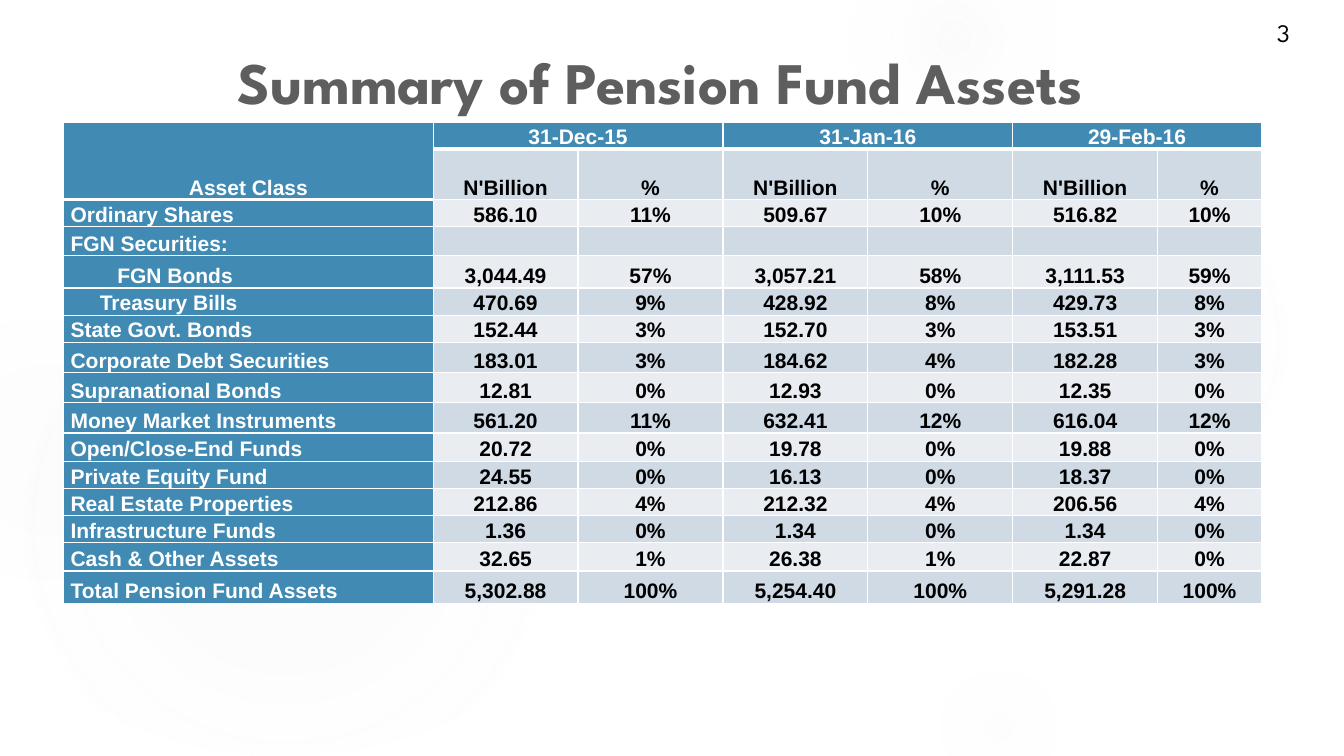
from collections import namedtuple
from dataclasses import dataclass

from lxml import etree
from pptx import Presentation
from pptx.dml.color import RGBColor
from pptx.enum import shapes, text
from pptx.oxml import ns
from pptx.util import Pt

Box = namedtuple("Box", "left top width height")


@dataclass(frozen=True)
class Theme:
    display_font: str = "League Spartan"
    table_font: str = "Arial"
    white: str = "FFFFFF"
    black: str = "000000"
    title_gray: str = "5E5E5E"
    glow_gray: str = "EBEBEB"
    header_blue: str = "418AB3"
    dark_band: str = "CFDAE5"
    light_band: str = "E9EDF2"
    title_size: float = 42
    number_size: float = 18
    table_size: float = 15
    line_pitch: float = 18


THEME = Theme()

# Each glow: its box, then (position %, opacity %) of the gradient stops
GLOWS = [
    (Box(661.7, 131.8, 295.9, 221.8), [(0, 7), (36, 6), (69, 0)]),
    (Box(597.6, -36, 167.8, 126), [(0, 14), (36, 7), (73, 0)]),
    (Box(661.7, 480.2, 103.7, 77.8), [(0, 9), (36, 5), (66, 0)]),
    (Box(-15.8, 210.2, 439.9, 329.8), [(0, 11), (36, 10), (75, 0)]),
    (Box(-87.8, 228.2, 247.7, 185.8), [(0, 8), (36, 8), (72, 0)]),
]

COLUMN_WIDTHS = [264] + [103.5] * 5 + [74.2]
PERIODS = ["31-Dec-15", "31-Jan-16", "29-Feb-16"]
HEADER_HEIGHTS = [19.4, 36]
# Row height, label indent, label, then amount and share for each period
ASSETS = [
    (19.4, 0, "Ordinary Shares", "586.10", "11%", "509.67", "10%", "516.82", "10%"),
    (20.9, 0, "FGN Securities:", "", "", "", "", "", ""),
    (23, 33.4, "FGN Bonds", "3,044.49", "57%", "3,057.21", "58%", "3,111.53", "59%"),
    (19.4, 20.9, "Treasury Bills", "470.69", "9%", "428.92", "8%", "429.73", "8%"),
    (19.4, 0, "State Govt. Bonds", "152.44", "3%", "152.70", "3%", "153.51", "3%"),
    (21.6, 0, "Corporate Debt Securities", "183.01", "3%", "184.62", "4%", "182.28", "3%"),
    (21.6, 0, "Supranational Bonds", "12.81", "0%", "12.93", "0%", "12.35", "0%"),
    (21.6, 0, "Money Market Instruments", "561.20", "11%", "632.41", "12%", "616.04", "12%"),
    (20.2, 0, "Open/Close-End Funds", "20.72", "0%", "19.78", "0%", "19.88", "0%"),
    (19.4, 0, "Private Equity Fund", "24.55", "0%", "16.13", "0%", "18.37", "0%"),
    (19.4, 0, "Real Estate Properties", "212.86", "4%", "212.32", "4%", "206.56", "4%"),
    (19.4, 0, "Infrastructure Funds", "1.36", "0%", "1.34", "0%", "1.34", "0%"),
    (20.2, 0, "Cash & Other Assets", "32.65", "1%", "26.38", "1%", "22.87", "0%"),
    (23, 0, "Total Pension Fund Assets", "5,302.88", "100%", "5,254.40", "100%", "5,291.28", "100%"),
]


def points(values):
    return [Pt(value) for value in values]


def add_child(parent, tag, **attributes):
    child = etree.SubElement(parent, ns.qn(tag))
    for name, value in attributes.items():
        child.set(name, str(value))
    return child


def style_font(font, name, size, color, bold):
    font.name, font.size, font.bold = name, Pt(size), bold
    font.color.rgb = RGBColor.from_string(color)


def add_glow(page, box, stops):
    """Draw an ellipse that fades out from its centre."""
    glow = page.shapes.add_shape(shapes.MSO_SHAPE.OVAL, *points(box))
    glow.shadow.inherit = False
    glow.line.fill.background()
    gradient = etree.Element(ns.qn("a:gradFill"), rotWithShape="1")
    stop_list = add_child(gradient, "a:gsLst")
    for position, opacity in stops:
        stop = add_child(stop_list, "a:gs", pos=position * 1000)
        color = add_child(stop, "a:srgbClr", val=THEME.glow_gray)
        add_child(color, "a:alpha", val=opacity * 1000)
    path = add_child(gradient, "a:path", path="circle")
    add_child(path, "a:fillToRect", l=50000, t=50000, r=50000, b=50000)
    glow._element.spPr.find(ns.qn("a:prstGeom")).addnext(gradient)


def add_text(page, box, words, size, color, align, anchor, bold=False):
    frame = page.shapes.add_textbox(*points(box)).text_frame
    frame.word_wrap = True
    frame.vertical_anchor = anchor
    frame.text = words
    para = frame.paragraphs[0]
    para.alignment = align
    style_font(para.runs[0].font, THEME.display_font, size, color, bold)


def set_borders(cell, bottom):
    """Rule the cell in white, with its own width for the lower edge."""
    properties = cell._tc.get_or_add_tcPr()
    for side, width in zip("LRTB", (1, 1, 1, bottom)):
        line = add_child(properties, "a:ln" + side, w=Pt(width))
        fill = add_child(line, "a:solidFill")
        add_child(fill, "a:srgbClr", val=THEME.white)


def fill_cell(cell, words, fill, color, centred=True, indent=0, bottom=1):
    set_borders(cell, bottom)
    cell.fill.solid()
    cell.fill.fore_color.rgb = RGBColor.from_string(fill)
    cell.vertical_anchor = text.MSO_ANCHOR.BOTTOM
    cell.margin_left = cell.margin_right = Pt(5)
    cell.margin_top = cell.margin_bottom = Pt(0)
    para = cell.text_frame.paragraphs[0]
    para.text = words
    para.line_spacing = Pt(THEME.line_pitch)
    para.alignment = text.PP_ALIGN.CENTER if centred else text.PP_ALIGN.LEFT
    if indent:
        para._p.get_or_add_pPr().set("marL", str(Pt(indent)))
    for span in para.runs:
        style_font(span.font, THEME.table_font, THEME.table_size, color, True)
    if not words:
        add_child(para._p, "a:endParaRPr", sz=int(THEME.table_size * 100))


def add_asset_table(page, left, top):
    heights = HEADER_HEIGHTS + [asset[0] for asset in ASSETS]
    box = Box(left, top, sum(COLUMN_WIDTHS), sum(heights))
    table = page.shapes.add_table(len(heights), len(COLUMN_WIDTHS), *points(box)).table
    table.first_row = table.horz_banding = False
    for column, width in zip(table.columns, COLUMN_WIDTHS):
        column.width = Pt(width)
    for row, height in zip(table.rows, heights):
        row.height = Pt(height)

    period_cells = [words for period in PERIODS for words in (period, "")]
    for column, words in enumerate(["Asset Class"] + period_cells):
        fill_cell(table.cell(0, column), words, THEME.header_blue, THEME.white, bottom=3)
    fill_cell(table.cell(1, 0), "", THEME.header_blue, THEME.white, bottom=3)
    for column, words in enumerate(["N'Billion", "%"] * len(PERIODS), 1):
        fill_cell(table.cell(1, column), words, THEME.dark_band, THEME.black)
    table.cell(0, 0).merge(table.cell(1, 0))
    for column in range(1, len(COLUMN_WIDTHS), 2):
        table.cell(0, column).merge(table.cell(0, column + 1))

    for row, (_, indent, label, *values) in enumerate(ASSETS, len(HEADER_HEIGHTS)):
        fill_cell(table.cell(row, 0), label, THEME.header_blue, THEME.white,
                  centred=False, indent=indent)
        band = THEME.dark_band if row % 2 else THEME.light_band
        for column, value in enumerate(values, 1):
            fill_cell(table.cell(row, column), value, band, THEME.black)


def build_summary_page(deck):
    page = deck.slides.add_slide(deck.slide_layouts[6])
    page.background.fill.solid()
    page.background.fill.fore_color.rgb = RGBColor.from_string(THEME.white)
    for box, stops in GLOWS:
        add_glow(page, box, stops)
    add_text(page, Box(905, 8.6, 36.7, 28.8), "3", THEME.number_size, THEME.black,
             text.PP_ALIGN.LEFT, text.MSO_ANCHOR.TOP)
    add_text(page, Box(20.2, 28.8, 902.9, 58.3), "Summary of Pension Fund Assets",
             THEME.title_size, THEME.title_gray, text.PP_ALIGN.CENTER,
             text.MSO_ANCHOR.MIDDLE, bold=True)
    add_asset_table(page, 45.4, 87.1)


def main():
    deck = Presentation()
    deck.slide_width, deck.slide_height = Pt(960), Pt(540)
    build_summary_page(deck)
    deck.save("out.pptx")


if __name__ == "__main__":
    main()
